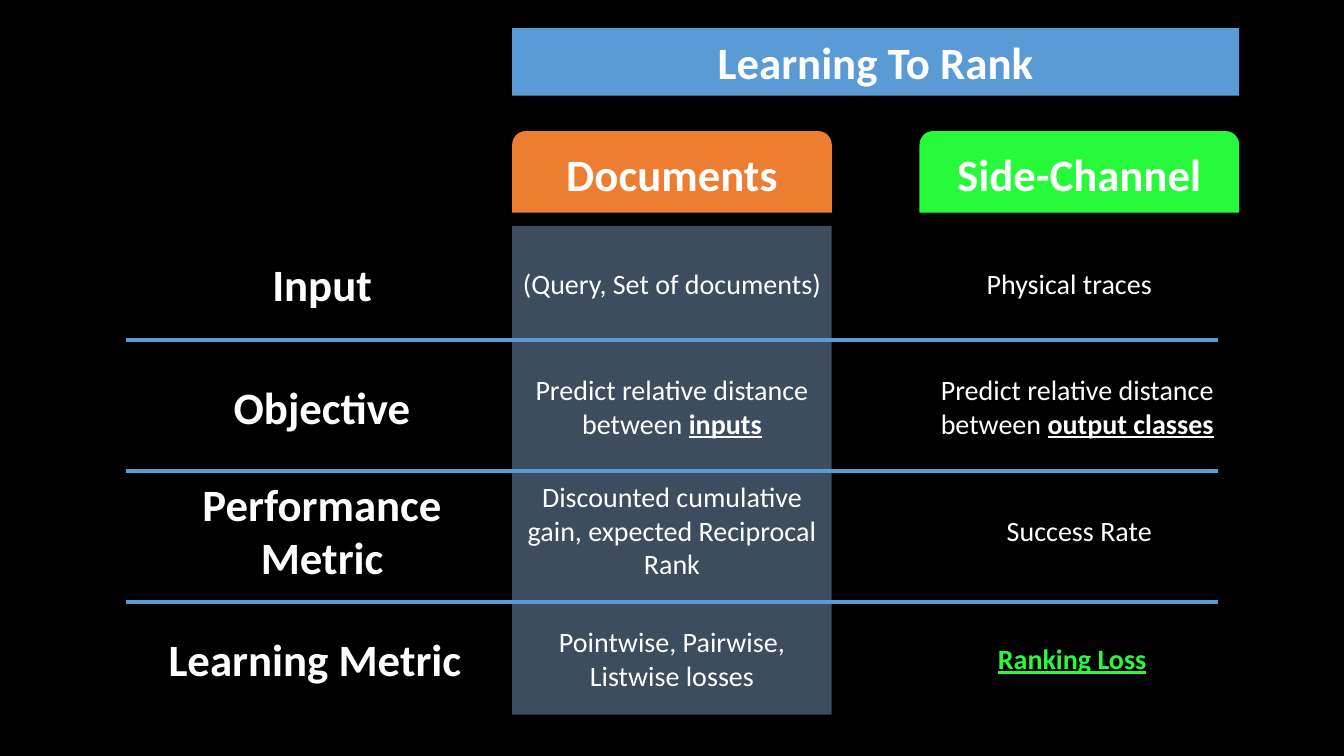
from dataclasses import dataclass

from lxml import etree
from pptx import Presentation
from pptx import util as u
from pptx.dml.color import RGBColor
from pptx.enum import shapes, text
from pptx.oxml import parse_xml
from pptx.oxml.ns import nsdecls, qn


@dataclass(frozen=True)
class Theme:
    font: str = "Calibri"
    heading: int = 32
    body: int = 20
    rule: int = 3
    black: str = "000000"
    white: str = "FFFFFF"
    blue: str = "5B9BD5"
    orange: str = "ED7D31"
    green: str = "27F93B"
    slate: str = "3D4C5F"


@dataclass(frozen=True)
class Box:
    left: float
    top: float
    width: float
    height: float

    def inches(self):
        return [u.Inches(v) for v in (self.left, self.top, self.width, self.height)]


THEME = Theme()
WIDTH, HEIGHT = 13.33, 7.5

# Column grid: three equal panels at a fixed pitch
PANEL_LEFT, PANEL_WIDTH, PITCH = 1.04, 3.17, 4.04
COLUMNS = [PANEL_LEFT + PITCH * i for i in range(3)]
LABEL_LEFT, LABEL_WIDTH = 1.3, 3.79

# Row grid: text centres and the rules between rows
ROW_CENTRES = (2.81, 4.03, 5.26, 6.53)
RULE_LEFT, RULE_WIDTH, RULE_TOP, RULE_PITCH = 1.25, 10.83, 3.37, 1.3

HEADERS = (("Documents", THEME.orange), ("Side-Channel", THEME.green))
PANEL_COLOURS = (THEME.black, THEME.slate, THEME.black)

# Each cell: plain text, underlined text, line count, sideways shift
LABELS = (
    ("Input", "", 1, 0),
    ("Objective", "", 1, 0),
    ("Performance Metric", "", 2, 0),
    ("Learning Metric", "", 1, -0.07),
)
DOCUMENTS = (
    ("(Query, Set of documents)", "", 1, 0),
    ("Predict relative distance between ", "inputs", 2, 0),
    ("Discounted cumulative gain, expected Reciprocal Rank", "", 3, 0),
    ("Pointwise, Pairwise, Listwise losses", "", 2, 0),
)
SIDE_CHANNEL = (
    ("Physical traces", "", 1, -0.1),
    ("Predict relative distance between ", "output classes", 2, -0.02),
    ("Success Rate", "", 1, 0),
    ("", "Ranking Loss", 1, -0.07),
)


def colour(value):
    return RGBColor.from_string(value)


def write(shape, plain, size, bold=False, stressed="", stress_colour=THEME.white):
    """Centre plain text in the shape, followed by bold underlined text."""
    frame = shape.text_frame
    frame.word_wrap = True
    frame.vertical_anchor = text.MSO_ANCHOR.MIDDLE
    para = frame.paragraphs[0]
    para.alignment = text.PP_ALIGN.CENTER
    for words, stress in ((plain, False), (stressed, True)):
        if not words:
            continue
        span = para.add_run()
        span.text = words
        span.font.name = THEME.font
        span.font.size = u.Pt(size)
        span.font.bold = bold or stress
        span.font.underline = stress
        span.font.color.rgb = colour(stress_colour if stress else THEME.white)


def add_block(page, kind, box, fill):
    block = page.shapes.add_shape(kind, *box.inches())
    block.shadow.inherit = False
    block.fill.solid()
    block.fill.fore_color.rgb = colour(fill)
    block.line.fill.background()
    return block


def add_title(page, box, words):
    """Turn the title placeholder into a filled pill."""
    title = page.shapes.title
    title.left, title.top, title.width, title.height = box.inches()
    title.element.spPr.append(parse_xml(
        f'<a:prstGeom {nsdecls("a")} prst="roundRect"><a:avLst>'
        '<a:gd name="adj" fmla="val 50000"/></a:avLst></a:prstGeom>'))
    title.fill.solid()
    title.fill.fore_color.rgb = colour(THEME.blue)
    title.text_frame.auto_size = text.MSO_AUTO_SIZE.NONE
    write(title, words, THEME.heading, bold=True)
    title.text_frame.paragraphs[0].line_spacing = 1.0


def add_headers(page, box):
    for i, (words, fill) in enumerate(HEADERS):
        tab = Box(box.left + PITCH * i, box.top, PANEL_WIDTH, box.height)
        header = add_block(page, shapes.MSO_SHAPE.ROUND_2_SAME_RECTANGLE, tab, fill)
        write(header, words, THEME.heading, bold=True)


def add_panels(page, box):
    for i, fill in enumerate(PANEL_COLOURS):
        panel = Box(box.left + PITCH * i, box.top, PANEL_WIDTH, box.height)
        add_block(page, shapes.MSO_SHAPE.RECTANGLE, panel, fill)


def add_rules(page, box):
    for i in range(len(ROW_CENTRES) - 1):
        y = u.Inches(box.top + RULE_PITCH * i)
        rule = page.shapes.add_connector(
            shapes.MSO_CONNECTOR.STRAIGHT,
            u.Inches(box.left), y, u.Inches(box.left + box.width), y)
        rule.line.color.rgb = colour(THEME.blue)
        rule.line.width = u.Pt(THEME.rule)
        etree.SubElement(rule.element.spPr, qn("a:effectLst"))


def add_column(page, left, width, cells, size, bold=False):
    """Place one text box per row, centred on the row."""
    for centre, (plain, stressed, lines, shift) in zip(ROW_CENTRES, cells):
        height = 0.1 + lines * size * 1.22 / 72
        cell = Box(left + shift, centre - height / 2, width, height)
        area = page.shapes.add_textbox(*cell.inches())
        stress_colour = THEME.white if plain else THEME.green
        write(area, plain, size, bold, stressed, stress_colour)
        area.text_frame.auto_size = text.MSO_AUTO_SIZE.SHAPE_TO_FIT_TEXT


def build_comparison(deck):
    page = deck.slides.add_slide(deck.slide_layouts[5])
    page.background.fill.solid()
    page.background.fill.fore_color.rgb = colour(THEME.black)
    label, documents, side_channel = COLUMNS
    span = PITCH + PANEL_WIDTH
    add_title(page, Box(documents, 0.28, span, 0.67), "Learning To Rank")
    add_headers(page, Box(documents, 1.3, span, 0.81))
    add_panels(page, Box(label, 2.24, PITCH + span, 4.85))
    add_rules(page, Box(RULE_LEFT, RULE_TOP, RULE_WIDTH, 2 * RULE_PITCH))
    add_column(page, LABEL_LEFT, LABEL_WIDTH, LABELS, THEME.heading, bold=True)
    add_column(page, documents, PANEL_WIDTH, DOCUMENTS, THEME.body)
    add_column(page, side_channel, PANEL_WIDTH, SIDE_CHANNEL, THEME.body)


def main():
    deck = Presentation()
    deck.slide_width, deck.slide_height = u.Inches(WIDTH), u.Inches(HEIGHT)
    build_comparison(deck)
    deck.save("out.pptx")


if __name__ == "__main__":
    main()
